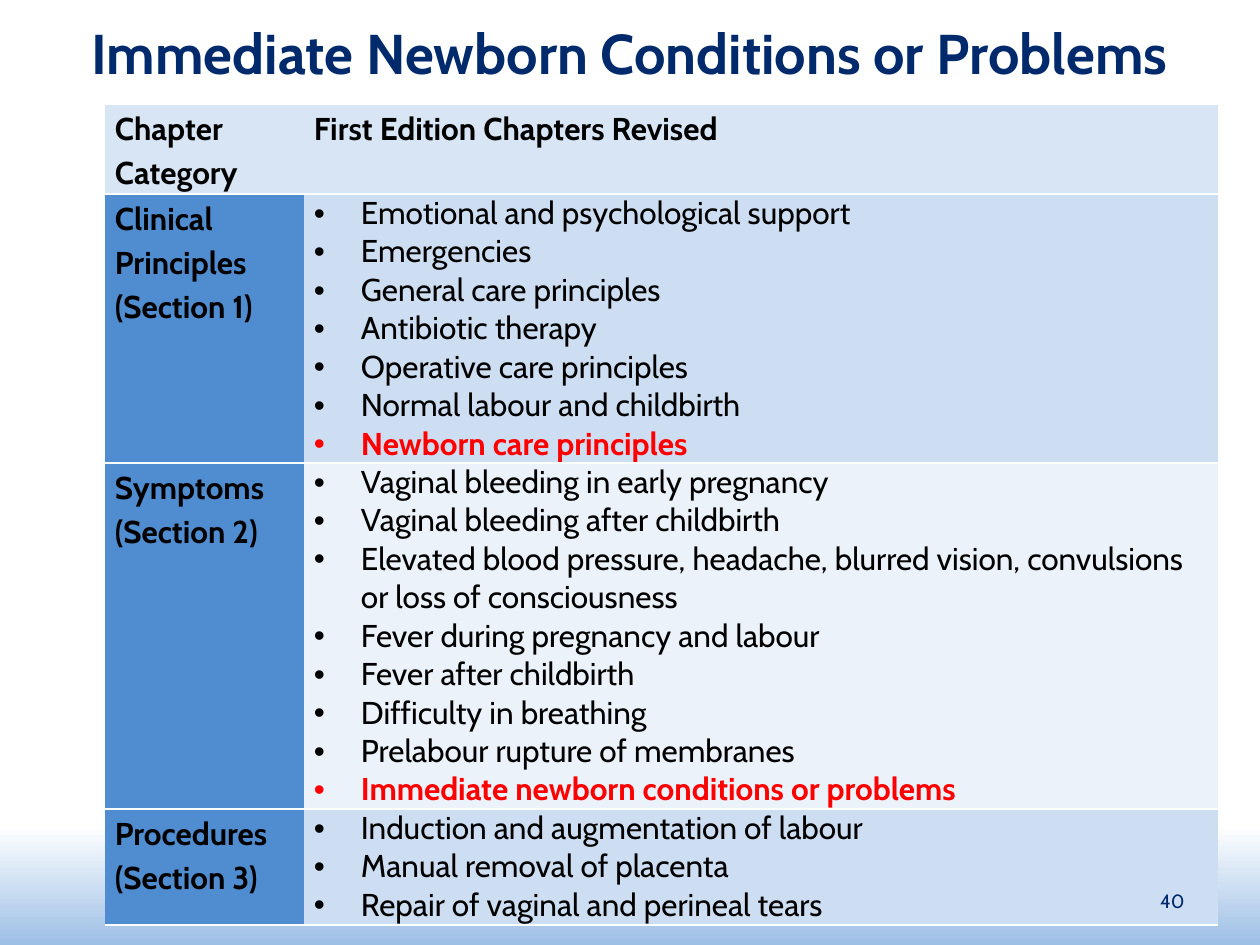
"""Build the slide listing the revised chapters by category."""
from dataclasses import dataclass

from lxml.etree import SubElement
from pptx import Presentation
from pptx.dml.color import RGBColor
from pptx.enum.shapes import MSO_SHAPE as Shape
from pptx.enum.text import MSO_ANCHOR as Anchor, PP_ALIGN as Align
from pptx.oxml import parse_xml
from pptx.oxml.ns import nsdecls, qn
from pptx.util import Emu, Pt

FONT = "Cabin"
NAVY = RGBColor(0x00, 0x2A, 0x6C)
BLACK = RGBColor(0x00, 0x00, 0x00)
WHITE = RGBColor(0xFF, 0xFF, 0xFF)
RED = RGBColor(0xFF, 0x00, 0x00)
SKY = RGBColor(0x9D, 0xBF, 0xE5)
HEADER = RGBColor(0xD7, 0xE5, 0xF4)
CATEGORY = RGBColor(0x50, 0x8C, 0xD0)
BAND_DARK = RGBColor(0xCE, 0xDE, 0xF2)
BAND_LIGHT = RGBColor(0xEB, 0xF2, 0xF9)


@dataclass
class Section:
    height: int
    band: RGBColor
    labels: list[str]
    chapters: list[str]
    highlight: str = ""


@dataclass
class Label:
    box: tuple[int, int, int, int]
    text: str
    size: int
    align: Align
    bold: bool = False


SECTIONS = [
    Section(269, BAND_DARK, ["Clinical", "Principles (Section 1)"],
            ["Emotional and psychological support", "Emergencies",
             "General care principles", "Antibiotic therapy",
             "Operative care principles", "Normal labour and childbirth"],
            "Newborn care principles"),
    Section(346, BAND_LIGHT, ["Symptoms", "(Section 2)"],
            ["Vaginal bleeding in early pregnancy",
             "Vaginal bleeding after childbirth",
             "Elevated blood pressure, headache, blurred vision, "
             "convulsions or loss of consciousness",
             "Fever during pregnancy and labour", "Fever after childbirth",
             "Difficulty in breathing", "Prelabour rupture of membranes"],
            "Immediate newborn conditions or problems"),
    Section(116, BAND_DARK, ["Procedures", "(Section 3)"],
            ["Induction and augmentation of labour",
             "Manual removal of placenta",
             "Repair of vaginal and perineal tears"]),
]
HEADINGS = ["Chapter Category", "First Edition Chapters Revised"]
HEADING_HEIGHT = 90
COLUMNS = [199, 914]
TITLE = Label((21, 21, 1218, 63), "Immediate Newborn Conditions or Problems",
              32, Align.CENTER, True)
PAGE_NUMBER = Label((903, 876, 294, 50), "40", 11, Align.RIGHT)


def px(n: int) -> Emu:
    return Emu(round(n * 914400 / 126))


def add_run(p, text: str, size: int, color: RGBColor, bold: bool) -> None:
    r = p.add_run()
    r.text = text
    r.font.name, r.font.size, r.font.bold = FONT, Pt(size), bold
    r.font.color.rgb = color


def add_label(slide, label: Label) -> None:
    tf = slide.shapes.add_textbox(*map(px, label.box)).text_frame
    tf.word_wrap = True
    tf.vertical_anchor = Anchor.MIDDLE
    p = tf.paragraphs[0]
    p.alignment = label.align
    add_run(p, label.text, label.size, NAVY, label.bold)


def add_background(slide) -> None:
    sp = slide.shapes.add_shape(Shape.RECTANGLE, *map(px, (0, 347, 1260, 598)))
    sp.shadow.inherit = False
    sp.line.fill.background()
    sp.fill.gradient()
    sp.fill.gradient_angle = 270
    for stop, position, color in zip(sp.fill.gradient_stops, (0.8, 1), (WHITE, SKY)):
        stop.position, stop.color.rgb = position, color


def style_cell(cell, fill: RGBColor) -> None:
    cell.margin_left = cell.margin_right = px(10)
    cell.margin_top = cell.margin_bottom = 0
    cell.fill.solid()
    cell.fill.fore_color.rgb = fill
    rule = f'<a:solidFill><a:srgbClr val="{WHITE}"/></a:solidFill>'
    sides = {"lnL": "<a:noFill/>", "lnR": "<a:noFill/>", "lnT": rule, "lnB": rule}
    tc_pr = cell._tc.get_or_add_tcPr()
    for i, (side, paint) in enumerate(sides.items()):
        tc_pr.insert(i, parse_xml(
            f'<a:{side} {nsdecls("a")} w="12700">{paint}</a:{side}>'))


def paragraphs(cell, count: int) -> list:
    tf = cell.text_frame
    return [tf.paragraphs[0]] + [tf.add_paragraph() for _ in range(count - 1)]


def fill_heading(cell, lines: list[str], fill: RGBColor) -> None:
    style_cell(cell, fill)
    for p, line in zip(paragraphs(cell, len(lines)), lines):
        p.line_spacing = 1.15
        add_run(p, line, 18, BLACK, True)


def add_bullet(p) -> None:
    p_pr = p._p.get_or_add_pPr()
    indent = px(47)
    p_pr.set("marL", str(indent))
    p_pr.set("indent", str(-indent))
    SubElement(p_pr, qn("a:buFont"), typeface="Arial")
    SubElement(p_pr, qn("a:buChar"), char="•")


def fill_chapters(cell, section: Section) -> None:
    style_cell(cell, section.band)
    lines = section.chapters + ([section.highlight] if section.highlight else [])
    for p, line in zip(paragraphs(cell, len(lines)), lines):
        add_bullet(p)
        marked = line == section.highlight
        if marked:
            p.space_after = Pt(5)
        add_run(p, line, 18, RED if marked else BLACK, marked)


def add_chapter_table(slide) -> None:
    heights = [HEADING_HEIGHT] + [s.height for s in SECTIONS]
    box = (105, 104, sum(COLUMNS), sum(heights))
    table = slide.shapes.add_table(len(heights), len(COLUMNS), *map(px, box)).table
    table.horz_banding = False
    for column, width in zip(table.columns, COLUMNS):
        column.width = px(width)
    for row, height in zip(table.rows, heights):
        row.height = px(height)
    for i, heading in enumerate(HEADINGS):
        fill_heading(table.cell(0, i), [heading], HEADER)
    for i, section in enumerate(SECTIONS, 1):
        fill_heading(table.cell(i, 0), section.labels, CATEGORY)
        fill_chapters(table.cell(i, 1), section)


def main() -> None:
    prs = Presentation()
    prs.slide_width, prs.slide_height = px(1260), px(945)
    slide = prs.slides.add_slide(prs.slide_layouts[6])
    add_background(slide)
    add_label(slide, TITLE)
    add_chapter_table(slide)
    add_label(slide, PAGE_NUMBER)
    prs.save("out.pptx")


if __name__ == "__main__":
    main()
